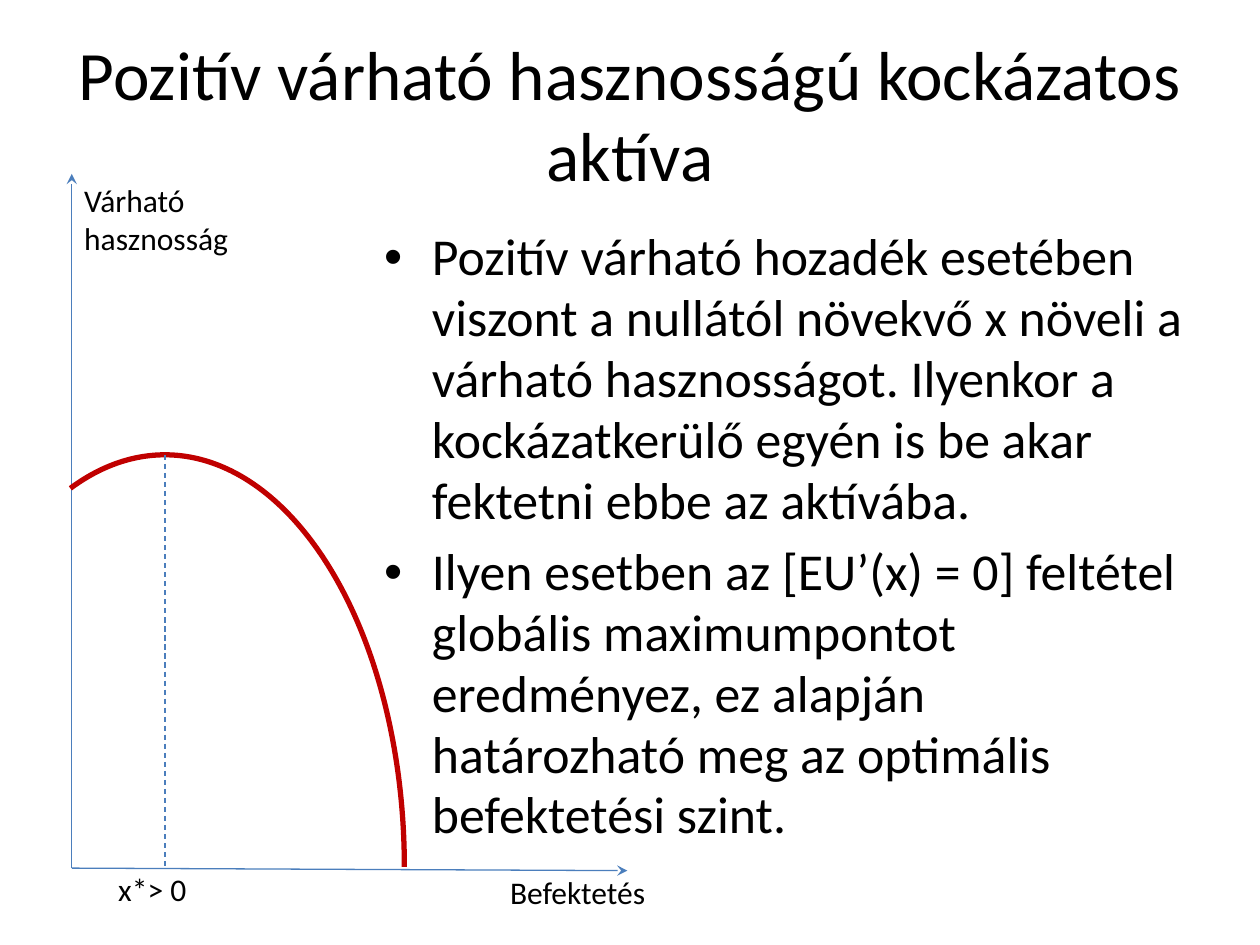
from pptx import Presentation
from pptx.dml.color import RGBColor
from pptx.enum.dml import MSO_LINE_DASH_STYLE as Dash
from pptx.enum.shapes import MSO_CONNECTOR as Connector, MSO_SHAPE as Shape
from pptx.enum.text import MSO_ANCHOR as Anchor, PP_ALIGN as Align
from pptx.oxml.ns import qn
from pptx.util import Inches, Pt
from lxml.etree import SubElement

COLORS = {"text": "000000", "axis": "4B7EBC", "curve": "C00000"}
FONT = "Calibri"

TITLE = "Pozitív várható hasznosságú kockázatos aktíva"
POINTS = [
    "Pozitív várható hozadék esetében viszont a nullától növekvő x növeli a "
    "várható hasznosságot. Ilyenkor a kockázatkerülő egyén is be akar fektetni "
    "ebbe az aktívába.",
    "Ilyen esetben az [EU’(x) = 0] feltétel globális maximumpontot eredményez, "
    "ez alapján határozható meg az optimális befektetési szint.",
]
LABELS = [
    (0.57, 1.39, 2.28, 0.71, ["Várható", "hasznosság"]),
    (3.95, 6.88, 1.65, 0.42, ["Befektetés"]),
    (0.84, 6.86, 0.94, 0.4, ["x*> 0"]),
]
ORIGIN = (0.57, 6.89)
PEAK = (1.31, 3.61)
RADIUS_X, RADIUS_Y = 1.9, 3.27


class SlideBuilder:
    """Holds the style and the current slide."""

    def __init__(self, slide):
        self.slide = slide

    def color(self, name):
        return RGBColor.from_string(COLORS[name])

    def text(self, left, top, width, height, lines, size=18, align=Align.LEFT,
             anchor=Anchor.TOP, spacing=None, bullets=False):
        box = self.slide.shapes.add_textbox(
            Inches(left), Inches(top), Inches(width), Inches(height))
        frame = box.text_frame
        frame.word_wrap = True
        frame.vertical_anchor = anchor
        for index, line in enumerate(lines):
            paragraph = frame.add_paragraph() if index else frame.paragraphs[0]
            paragraph.alignment = align
            if spacing:
                paragraph.line_spacing = spacing
            if bullets:
                self.bullet(paragraph, size)
            run = paragraph.add_run()
            run.text = line
            run.font.name = FONT
            run.font.size = Pt(size)
            run.font.color.rgb = self.color("text")

    def bullet(self, paragraph, size):
        paragraph.space_before = Pt(round(size * 0.2, 1))
        properties = paragraph._p.get_or_add_pPr()
        properties.set("marL", str(Inches(0.38)))
        properties.set("indent", str(Inches(-0.38)))
        SubElement(properties, qn("a:buFont"), typeface="Arial")
        SubElement(properties, qn("a:buChar"), char="•")

    def line(self, start, end, dash=None, arrow=False):
        connector = self.slide.shapes.add_connector(
            Connector.STRAIGHT, *map(Inches, start + end))
        connector.line.color.rgb = self.color("axis")
        connector.line.width = Pt(0.75)
        if dash:
            connector.line.dash_style = dash
        if arrow:
            SubElement(connector.line._get_or_add_ln(), qn("a:tailEnd"), type="stealth")
        SubElement(connector._element.spPr, qn("a:effectLst"))

    def arc(self, left, top, width, height, start):
        shape = self.slide.shapes.add_shape(
            Shape.ARC, Inches(left), Inches(top), Inches(width), Inches(height))
        shape.shadow.inherit = False
        shape.adjustments[0] = start
        shape.adjustments[1] = 0
        shape.fill.background()
        shape.line.color.rgb = self.color("curve")
        shape.line.width = Pt(3)


def main():
    presentation = Presentation()
    presentation.slide_width = Inches(10)
    presentation.slide_height = Inches(7.5)
    builder = SlideBuilder(presentation.slides.add_slide(presentation.slide_layouts[6]))

    builder.text(0.5, 0.3, 9, 1.25, [TITLE], size=39.6, align=Align.CENTER,
                 anchor=Anchor.MIDDLE, spacing=0.98)
    builder.text(2.95, 1.75, 6.55, 4.95, POINTS, size=29.6, spacing=0.98, bullets=True)
    builder.line(ORIGIN, (ORIGIN[0], 1.38), arrow=True)
    builder.line(ORIGIN, (4.98, 6.91), arrow=True)
    builder.arc(PEAK[0] - RADIUS_X, PEAK[1], 2 * RADIUS_X, 2 * RADIUS_Y, start=153.58)
    builder.line(PEAK, (PEAK[0], 6.9), dash=Dash.DASH)
    for label in LABELS:
        builder.text(*label)

    presentation.save("out.pptx")


if __name__ == "__main__":
    main()
